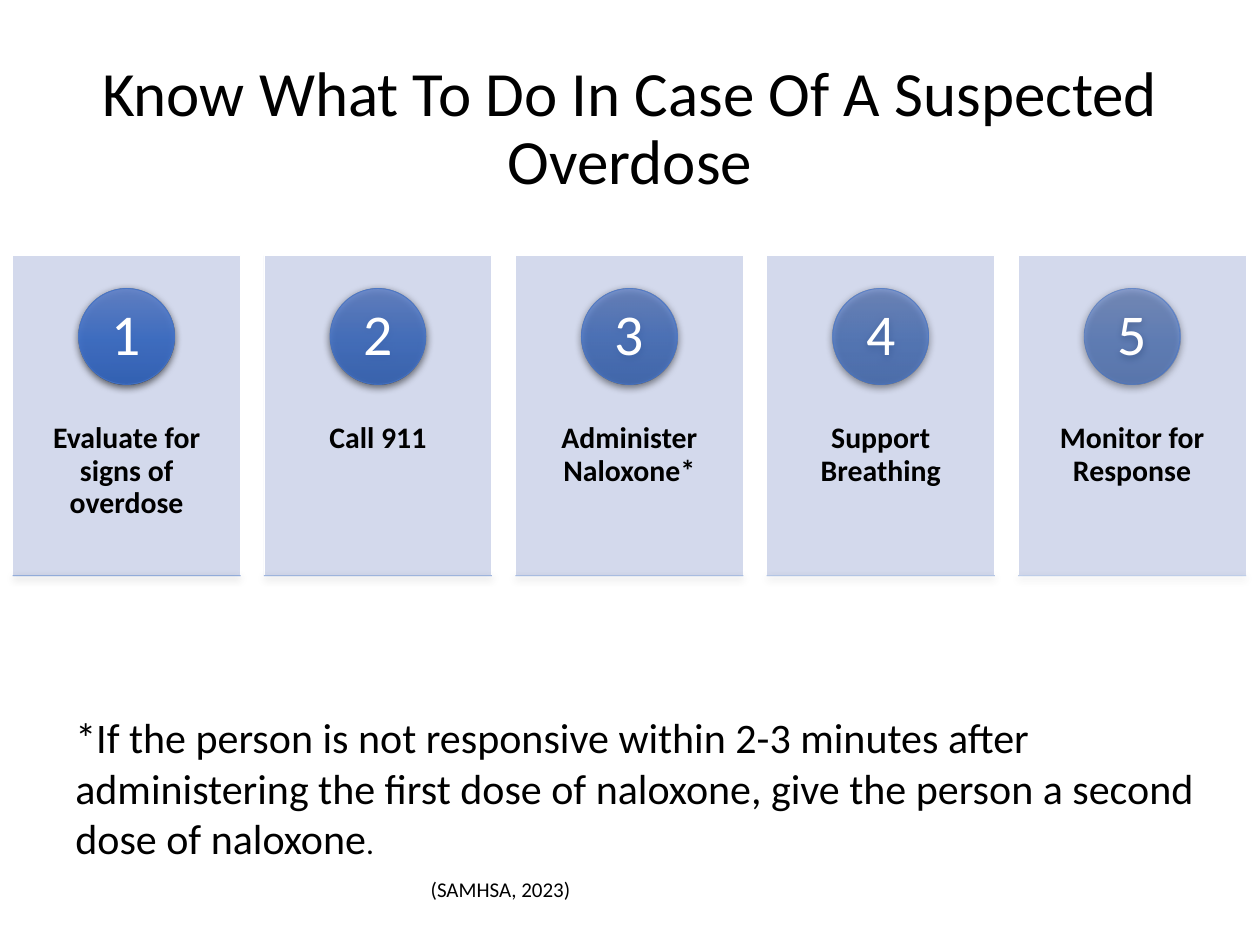
import pptx
import pptx.util
import pptx.dml.color
import pptx.enum.shapes
import pptx.enum.text
import pptx.oxml
import pptx.oxml.ns
from dataclasses import dataclass

Inches = pptx.util.Inches
Pt = pptx.util.Pt
Shape = pptx.enum.shapes.MSO_SHAPE
Align = pptx.enum.text.PP_ALIGN
Anchor = pptx.enum.text.MSO_ANCHOR
qn = pptx.oxml.ns.qn
NS = pptx.oxml.ns.nsdecls("a")


@dataclass(frozen=True)
class Theme:
    font: str = "Calibri"
    ink: str = "000000"
    white: str = "FFFFFF"
    card: str = "CFD5EA"
    line: str = "4472C4"
    shades: tuple = ("6183CB", "3E70CA", "3062BB")
    title: int = 36
    digit: int = 33
    label: int = 17
    note: int = 24
    stop: int = 18
    cite: int = 12


THEME = Theme()
STEPS = ["Evaluate for signs of overdose", "Call 911", "Administer Naloxone*",
         "Support Breathing", "Monitor for Response"]
LEFT, PITCH, WIDTH = 0.1, 1.995, 1.81
TOP, HEIGHT = 2.03, 2.54
DISC, DISC_TOP = 0.76, 2.29


def rgb(code):
    return pptx.dml.color.RGBColor.from_string(code)


def write(shape, *runs, color=THEME.ink, bold=False, align=Align.LEFT,
          anchor=Anchor.TOP, space=1.0, inset=(0.1, 0.05, 0.1, 0.05), wrap=True):
    """Fill a shape with one paragraph of (text, size) runs."""
    frame = shape.text_frame
    frame.word_wrap = wrap
    frame.vertical_anchor = anchor
    (frame.margin_left, frame.margin_top,
     frame.margin_right, frame.margin_bottom) = map(Inches, inset)
    para = frame.paragraphs[0]
    para.alignment = align
    para.line_spacing = space
    for text, size in runs:
        run = para.add_run()
        run.text = text
        run.font.name = THEME.font
        run.font.size = Pt(size)
        run.font.bold = bold
        run.font.color.rgb = rgb(color)


def fade(fill, alpha):
    """Set the opacity, in percent, of a solid fill's colour element."""
    tint = fill.find(".//" + qn("a:srgbClr"))
    tint.append(pptx.oxml.parse_xml(f'<a:alpha {NS} val="{round(alpha * 1000)}"/>'))


def stroke(line, color, alpha=100):
    line.color.rgb = rgb(color)
    line.width = Pt(0.5)
    if alpha < 100:
        fade(line._get_or_add_ln(), alpha)


def shade(shape, alpha):
    """Give a shape the vertical three-step gradient."""
    shape.fill.gradient()
    stops = "".join(
        f'<a:gs pos="{pos}"><a:srgbClr val="{code}">'
        f'<a:alpha val="{round(alpha * 1000)}"/></a:srgbClr></a:gs>'
        for pos, code in zip((0, 50000, 100000), THEME.shades))
    props = shape._element.spPr
    props.replace(props.find(qn("a:gradFill")), pptx.oxml.parse_xml(
        f'<a:gradFill {NS} rotWithShape="1"><a:gsLst>{stops}</a:gsLst>'
        '<a:lin ang="5400000" scaled="0"/></a:gradFill>'))


def shadow(shape):
    shape._element.spPr.append(pptx.oxml.parse_xml(
        f'<a:effectLst {NS}><a:outerShdw blurRad="{Pt(4.5)}" dist="{Pt(1.5)}" '
        'dir="5400000" algn="ctr" rotWithShape="0"><a:srgbClr val="000000">'
        '<a:alpha val="63000"/></a:srgbClr></a:outerShdw></a:effectLst>'))


def add_text(slide, box, *runs, **style):
    write(slide.shapes.add_textbox(*map(Inches, box)), *runs, **style)


def add_card(slide, left, text):
    card = slide.shapes.add_shape(
        Shape.RECTANGLE, *map(Inches, (left, TOP, WIDTH, HEIGHT)))
    card.shadow.inherit = False
    card.fill.solid()
    card.fill.fore_color.rgb = rgb(THEME.card)
    fade(card._element.spPr.find(qn("a:solidFill")), 90)
    stroke(card.line, THEME.white)
    write(card, (text, THEME.label), bold=True, align=Align.CENTER,
          space=0.9, inset=(0.14, 1.33, 0.14, 0.41))


def add_disc(slide, left, text, alpha):
    disc = slide.shapes.add_shape(
        Shape.OVAL, *map(Inches, (left, DISC_TOP, DISC, DISC)))
    shade(disc, alpha)
    stroke(disc.line, THEME.line, alpha)
    shadow(disc)
    write(disc, (text, THEME.digit), color=THEME.white, align=Align.CENTER,
          anchor=Anchor.MIDDLE, space=0.9, inset=(0.06, 0.01, 0.06, 0.01))


def add_rule(slide, left, alpha):
    base = TOP + HEIGHT
    rule = slide.shapes.add_connector(
        pptx.enum.shapes.MSO_CONNECTOR.STRAIGHT,
        *map(Inches, (left, base, left + WIDTH, base)))
    stroke(rule.line, THEME.line, alpha)
    shadow(rule)


def add_step(slide, index, text):
    """Draw a card, its number and its base line, fading from step to step."""
    left = LEFT + index * PITCH
    drop = 40 / (2 * len(STEPS) - 1)
    alpha = 90 - 2 * index * drop
    add_card(slide, left, text)
    add_disc(slide, left + (WIDTH - DISC) / 2, str(index + 1), alpha)
    add_rule(slide, left, alpha - drop)


def main():
    deck = pptx.Presentation()
    deck.slide_width, deck.slide_height = Inches(10), Inches(7.5)
    slide = deck.slides.add_slide(deck.slide_layouts[6])
    add_text(slide, (0.5, 0.41, 9, 1.25),
             ("Know What To Do In Case Of A Suspected Overdose", THEME.title),
             align=Align.CENTER, anchor=Anchor.MIDDLE, space=0.9)
    for index, text in enumerate(STEPS):
        add_step(slide, index, text)
    add_text(slide, (0.5, 5.6, 9.13, 1.31),
             ("*If the person is not responsive within 2-3 minutes after "
              "administering the first dose of naloxone, give the person a "
              "second dose of naloxone", THEME.note), (".", THEME.stop))
    add_text(slide, (3.32, 6.91, 1.33, 0.3), ("(SAMHSA, 2023)", THEME.cite),
             wrap=False)
    deck.save("out.pptx")


if __name__ == "__main__":
    main()
